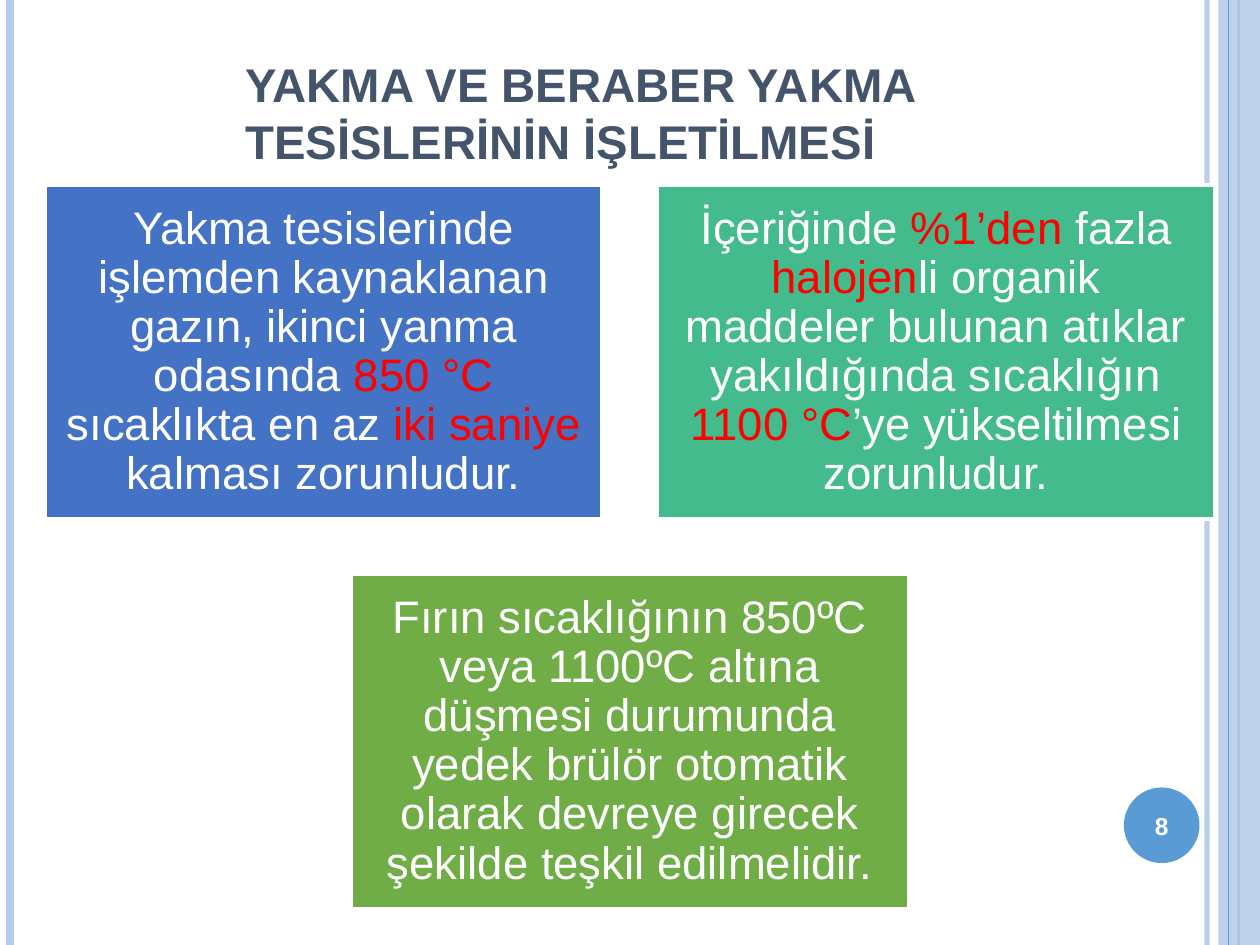
from lxml import etree
from pptx import Presentation
from pptx import util as u
from pptx.dml.color import RGBColor
from pptx.enum import shapes, text
from pptx.oxml.ns import qn

INK = {"white": "FFFFFF", "red": "FF0000", "title": "44546A", "pale": "B5CBE7",
       "sky": "5B9BD5", "blue": "4472C4", "teal": "43BB8D", "green": "70AD47"}
WIDE, HIGH = 10, 7.5

TITLE = [("YAKMA VE BERABER YAKMA TESİSLERİNİN İŞLETİLMESİ", "title")]
PAGE = [("8", "white")]
# Fill and text runs of each card, row by row
ROWS = [
    [("blue", [("Yakma tesislerinde işlemden kaynaklanan gazın, ikinci yanma odasında ", "white"),
               ("850 °C", "red"), (" sıcaklıkta en az ", "white"),
               ("iki saniye ", "red"), ("kalması zorunludur.", "white")]),
     ("teal", [("İçeriğinde ", "white"), ("%1’den ", "red"), ("fazla ", "white"),
               ("halojen", "red"),
               ("li organik maddeler bulunan atıklar yakıldığında sıcaklığın ", "white"),
               ("1100 °C", "red"), ("’ye yükseltilmesi zorunludur.", "white")])],
    [("green", [("Fırın sıcaklığının 850ºC veya 1100ºC altına düşmesi durumunda yedek "
                 "brülör otomatik olarak devreye girecek şekilde teşkil edilmelidir.",
                 "white")])],
]
CARD_W, CARD_H, GAP, TOP = 4.42, 2.65, 0.44, 1.47

# x, colour, width in points, opacity in percent
EDGES = [(9.58, "pale", 3, 93), (0.08, "pale", 4.5, 100), (9.83, "sky", 1.5, 100)]
INNER = (9.75, "sky", 0.75, 100)


def tint(form, name, alpha=100):
    """Give a fill a solid colour, with opacity in percent."""
    form.solid()
    form.fore_color.rgb = RGBColor.from_string(INK[name])
    if alpha < 100:
        clr = form._xPr.find(qn("a:solidFill"))[0]
        etree.SubElement(clr, qn("a:alpha"), val=str(alpha * 1000))


def rule(x, name, width, alpha):
    """Draw a vertical line over the full height of the slide."""
    line = slide.shapes.add_connector(shapes.MSO_CONNECTOR.STRAIGHT, u.Inches(x), 0,
                                      u.Inches(x), u.Inches(HIGH))
    line.line.width = u.Pt(width)
    tint(line.line.fill, name, alpha)
    etree.SubElement(line._element.spPr, qn("a:effectLst"))


def block(kind, x, y, w, h, name, alpha=100, edge=0):
    shape = slide.shapes.add_shape(kind, *map(u.Inches, (x, y, w, h)))
    shape.shadow.inherit = False
    tint(shape.fill, name, alpha)
    if edge:
        shape.line.width = u.Pt(edge)
        tint(shape.line.fill, "white")
    else:
        shape.line.fill.background()
    return shape


def write(shape, runs, size, bold=False, align="CENTER", anchor="MIDDLE",
          inset=(0.1, 0.05), lines=None):
    frame = shape.text_frame
    frame.word_wrap = True
    frame.vertical_anchor = text.MSO_ANCHOR[anchor]
    frame.margin_left = frame.margin_right = u.Inches(inset[0])
    frame.margin_top = frame.margin_bottom = u.Inches(inset[1])
    para = frame.paragraphs[0]
    para.alignment = text.PP_ALIGN[align]
    if lines:
        para.line_spacing = lines
    for words, name in runs:
        run = para.add_run()
        run.text = words
        run.font.name = "Arial"
        run.font.size = u.Pt(size)
        run.font.bold = bold
        run.font.color.rgb = RGBColor.from_string(INK[name])


deck = Presentation()
deck.slide_width, deck.slide_height = u.Inches(WIDE), u.Inches(HIGH)
slide = deck.slides.add_slide(deck.slide_layouts[6])
RECT, OVAL = shapes.MSO_SHAPE.RECTANGLE, shapes.MSO_SHAPE.OVAL

for edge in EDGES:
    rule(*edge)
block(RECT, 9.67, 0, 0.33, HIGH, "pale", alpha=87)
rule(*INNER)
badge = block(OVAL, 8.92, 6.25, 0.6, 0.6, "sky")
write(badge, PAGE, 14, bold=True, inset=(0, 0))

head = slide.shapes.add_textbox(*map(u.Inches, (1.85, 0.44, 6.82, 0.95)))
write(head, TITLE, 27, bold=True, align="LEFT", anchor="BOTTOM")

for r, row in enumerate(ROWS):
    left = (WIDE - len(row) * CARD_W - (len(row) - 1) * GAP) / 2
    for c, (name, runs) in enumerate(row):
        card = block(RECT, left + c * (CARD_W + GAP), TOP + r * (CARD_H + GAP),
                     CARD_W, CARD_H, name, edge=2)
        write(card, runs, 26, inset=(0.11, 0.11), lines=0.9)

deck.save("out.pptx")
